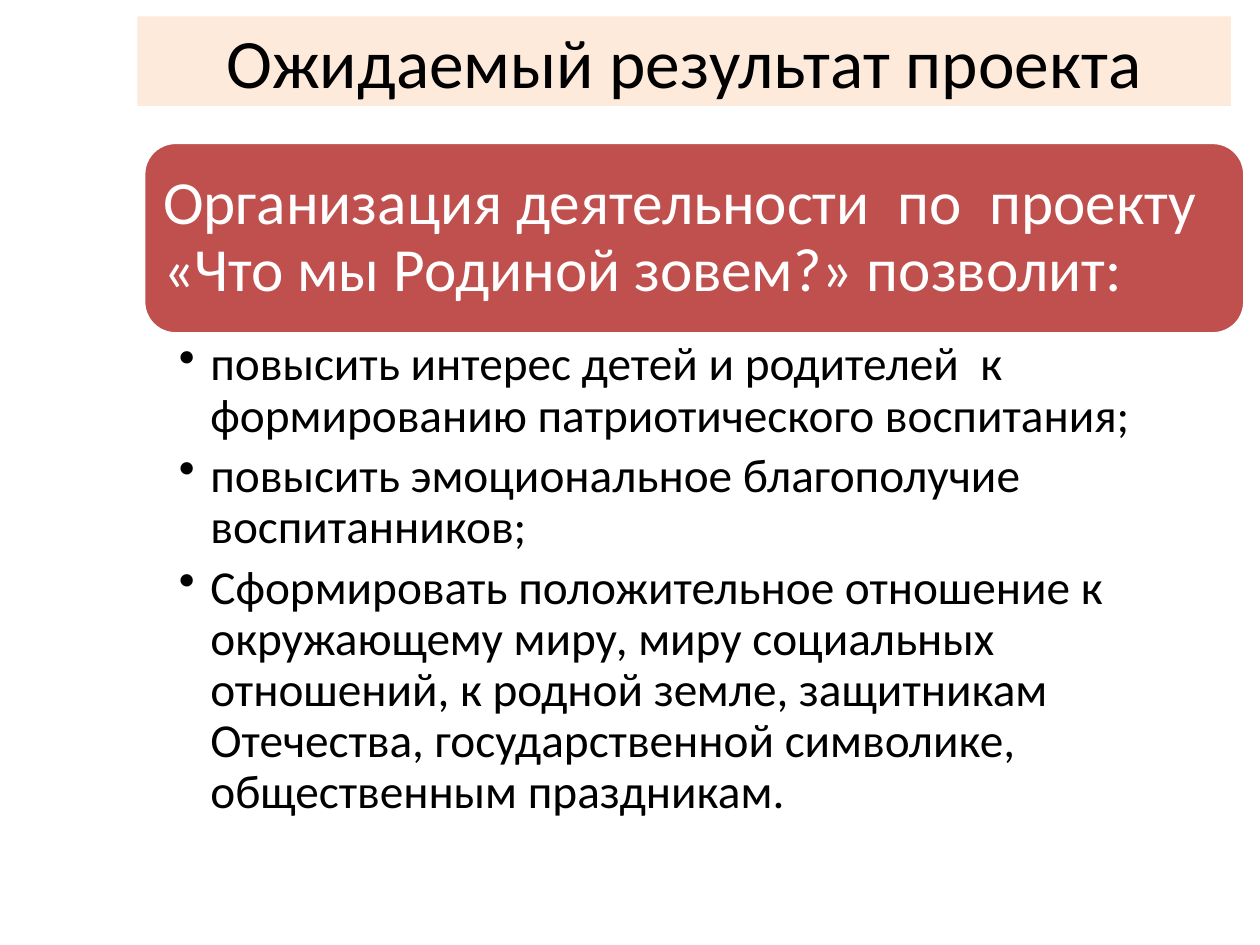
import pptx
import pptx.util
import pptx.dml.color
import pptx.enum.shapes
import pptx.enum.text
import lxml.etree

Inches = pptx.util.Inches
Pt = pptx.util.Pt
Anchor = pptx.enum.text.MSO_ANCHOR
Align = pptx.enum.text.PP_ALIGN


def paint(fmt, color):
    """Give a fill a solid hex colour."""
    fmt.solid()
    fmt.fore_color.rgb = pptx.dml.color.RGBColor.from_string(color)


def write(para, text, size, color, align=Align.LEFT):
    para.text = text
    para.alignment = align
    for run in para.runs:
        run.font.name = "Calibri"
        run.font.size = Pt(size)
        paint(run.font.fill, color)


prs = pptx.Presentation()
prs.slide_width = Inches(10)
prs.slide_height = Inches(7.5)
slide = prs.slides.add_slide(prs.slide_layouts[5])

# Title
title = slide.shapes.title
title.left, title.top = Inches(1.09), Inches(0.13)
title.width, title.height = Inches(8.68), Inches(0.71)
paint(title.fill, "FDEADA")
frame = title.text_frame
frame.auto_size = pptx.enum.text.MSO_AUTO_SIZE.NONE
frame.vertical_anchor = Anchor.MIDDLE
write(frame.paragraphs[0], "Ожидаемый результат проекта", 39.6, "000000", Align.CENTER)

# Banner
left, top, width, height = Inches(1.14), Inches(1.13), Inches(8.74), Inches(1.52)
banner = slide.shapes.add_shape(
    pptx.enum.shapes.MSO_SHAPE.ROUNDED_RECTANGLE, left, top, width, height)
banner.shadow.inherit = False
paint(banner.fill, "C0504D")
paint(banner.line.fill, "FFFFFF")
banner.line.width = Pt(2)
frame = banner.text_frame
frame.word_wrap = True
frame.vertical_anchor = Anchor.MIDDLE
# The rounded corners already add part of the inset
frame.margin_left = frame.margin_right = Inches(0.08)
frame.margin_top = frame.margin_bottom = Inches(0.08)
para = frame.paragraphs[0]
write(para, "Организация деятельности  по  проекту  «Что мы Родиной зовем?» позволит:",
      35, "FFFFFF")
para.line_spacing = 0.9

# Expected results
goals = [
    "повысить интерес детей и родителей  к формированию патриотического воспитания;",
    "повысить эмоциональное благополучие воспитанников;",
    "Сформировать положительное отношение к окружающему миру, миру социальных "
    "отношений, к родной земле, защитникам Отечества, государственной символике, "
    "общественным праздникам.",
]
box = slide.shapes.add_textbox(left, top + height, width, Inches(4.04))
frame = box.text_frame
frame.word_wrap = True
frame.margin_left, frame.margin_right = Inches(0.28), Inches(0.27)
frame.margin_top = frame.margin_bottom = Inches(0.05)
for i, goal in enumerate(goals):
    para = frame.add_paragraph() if i else frame.paragraphs[0]
    write(para, goal, 27, "000000")
    para.level = 1
    para.line_spacing = 0.9
    para.space_after = Pt(5.4)
    props = para._p.get_or_add_pPr()
    props.set("marL", str(Inches(0.25)))
    props.set("indent", str(Inches(-0.25)))
    bullet = lxml.etree.SubElement(props, pptx.oxml.ns.qn("a:buChar"))
    bullet.set("char", "•")

prs.save("out.pptx")
